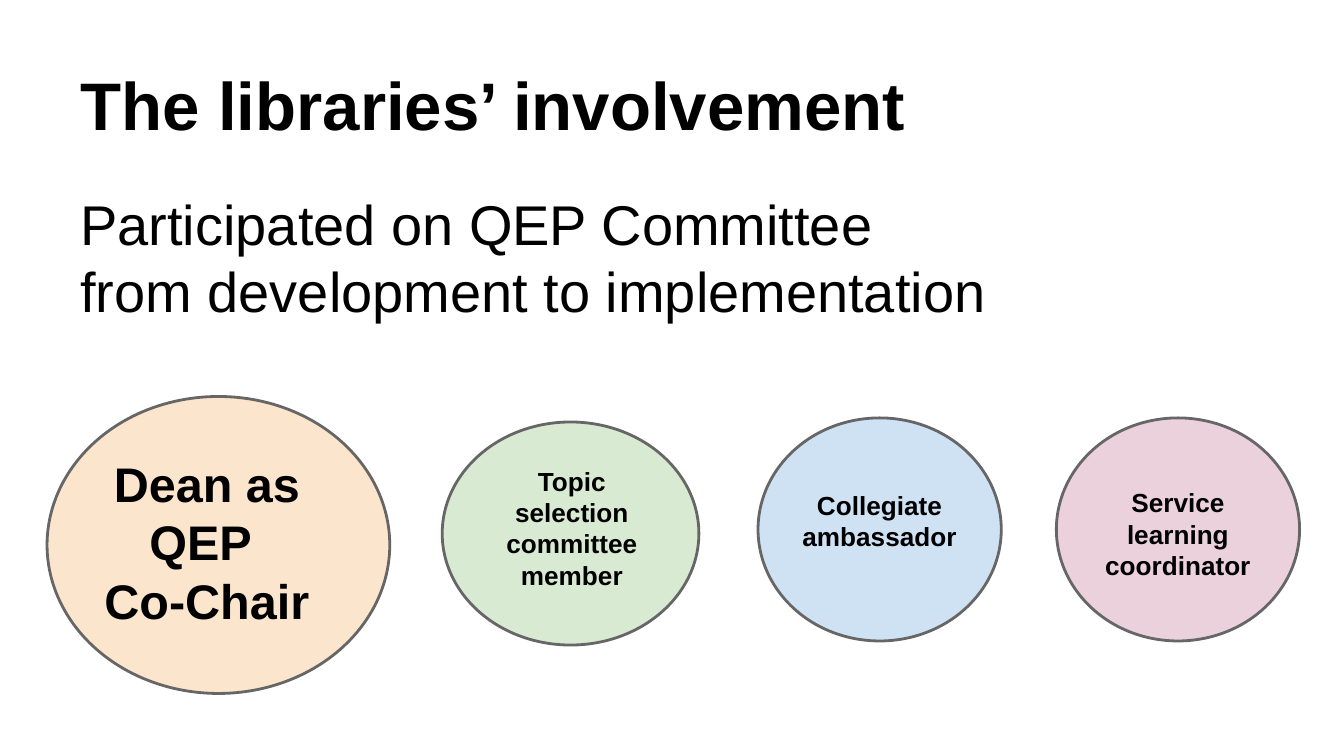
from pptx import Presentation
from pptx.dml.color import RGBColor
from pptx.enum.shapes import MSO_SHAPE
from pptx.enum.text import MSO_ANCHOR, PP_ALIGN
from pptx.util import Inches, Pt

ELLIPSE = MSO_SHAPE.OVAL
TOP, BOTTOM = MSO_ANCHOR.TOP, MSO_ANCHOR.BOTTOM
LEFT, CENTER = PP_ALIGN.LEFT, PP_ALIGN.CENTER

COLORS = {
    "text": "000000",
    "outline": "666666",
    "peach": "FCE5CD",
    "green": "D9EAD3",
    "blue": "CFE2F3",
    "pink": "EAD1DC",
}


def add_text(slide, place, lines, size, bold, align=LEFT, anchor=TOP):
    """Add a text box with one paragraph, its lines parted by line breaks."""
    box = slide.shapes.add_textbox(*map(Inches, place))
    frame = box.text_frame
    frame.word_wrap = True
    frame.vertical_anchor = anchor
    frame.margin_left = frame.margin_right = Inches(0.1)
    frame.margin_top = frame.margin_bottom = Inches(0.1)
    para = frame.paragraphs[0]
    para.alignment = align
    for index, line in enumerate(lines):
        if index:
            para.add_line_break()
        span = para.add_run()
        span.text = line
        span.font.name = "Arial"
        span.font.size = Pt(size)
        span.font.bold = bold
        span.font.color.rgb = RGBColor.from_string(COLORS["text"])


deck = Presentation()
deck.slide_width = Inches(10)
deck.slide_height = Inches(10) * 9 // 16
page = deck.slides.add_slide(deck.slide_layouts[6])

add_text(page, (0.5, 0.23, 9, 0.94), ["The libraries’ involvement"], 36, True,
         anchor=BOTTOM)
add_text(page, (0.5, 1.31, 9, 4.07),
         ["Participated on QEP Committee ", "from development to implementation"],
         30, False)

# Each role: fill, ellipse place, label place, label lines, text size
roles = [
    ("peach", (0.35, 2.95, 2.55, 2.21), (0.55, 3.28, 1.98, 1.21),
     ["Dean as QEP ", "Co-Chair"], 26),
    ("green", (3.29, 3.14, 1.91, 1.66), (3.52, 3.36, 1.47, 1.13),
     ["Topic selection committee member"], 14),
    ("blue", (5.64, 3.11, 1.81, 1.66), (5.81, 3.54, 1.47, 0.94),
     ["Collegiate ambassador"], 14),
    ("pink", (7.86, 3.11, 1.81, 1.66), (8.03, 3.52, 1.47, 0.79),
     ["Service learning coordinator"], 14),
]
for fill, ellipse_place, label_place, label, size in roles:
    ellipse = page.shapes.add_shape(ELLIPSE, *map(Inches, ellipse_place))
    ellipse.shadow.inherit = False
    ellipse.fill.solid()
    ellipse.fill.fore_color.rgb = RGBColor.from_string(COLORS[fill])
    ellipse.line.color.rgb = RGBColor.from_string(COLORS["outline"])
    ellipse.line.width = Pt(1.5)
    add_text(page, label_place, label, size, True, align=CENTER)

deck.save("out.pptx")
